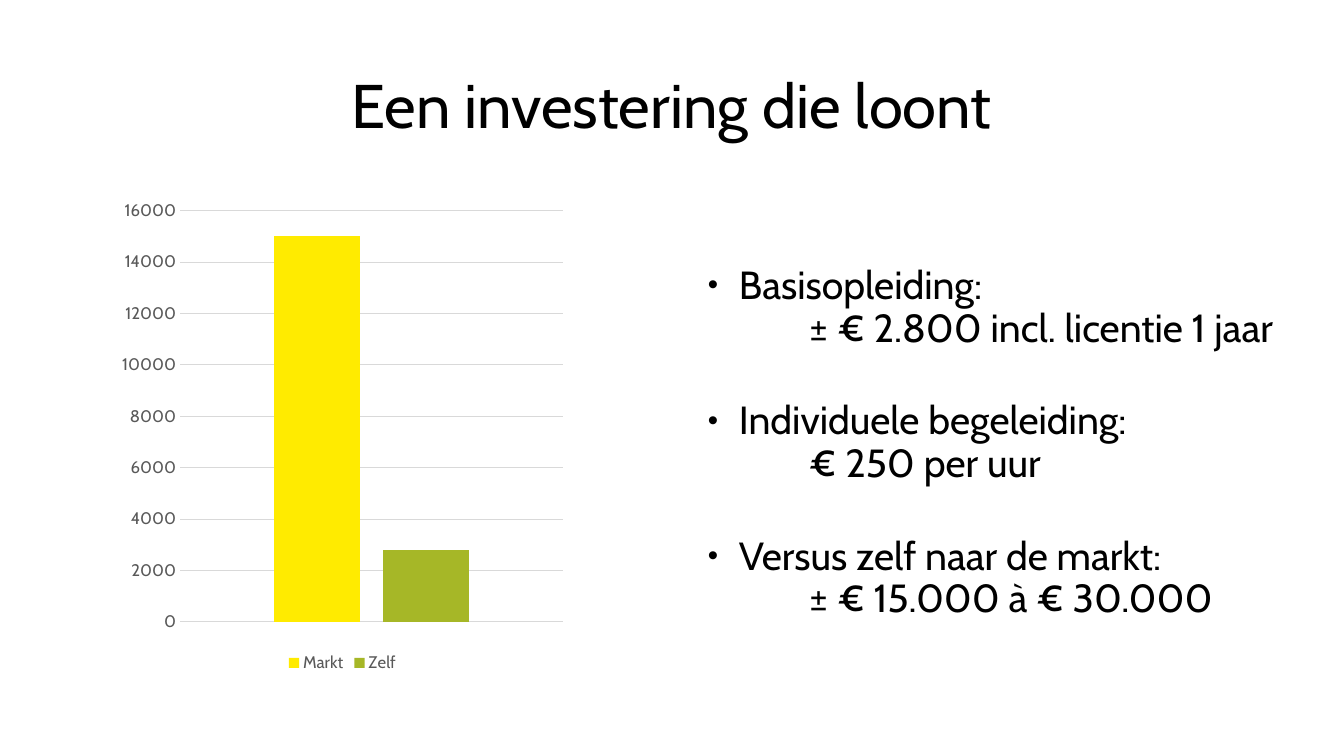
from lxml.etree import SubElement
from pptx import Presentation
from pptx.chart.data import CategoryChartData
from pptx.dml.color import RGBColor
from pptx.enum.chart import XL_CHART_TYPE, XL_LEGEND_POSITION, XL_TICK_MARK
from pptx.enum.text import MSO_ANCHOR, MSO_AUTO_SIZE, PP_ALIGN
from pptx.oxml.ns import qn
from pptx.util import Emu, Pt

PX = 914400 / 100.8
FONT = "Cabin"
COLORS = {"text": "000000", "labels": "595959", "grid": "D9D9D9",
          "Markt": "FFEB00", "Zelf": "A6B727"}
COSTS = {"Markt": 15000, "Zelf": 2800}
OFFERS = [
    "Basisopleiding:\v\t± € 2.800 incl. licentie 1 jaar",
    "Individuele begeleiding:\v\t€ 250 per uur",
    "Versus zelf naar de markt:\v\t± € 15.000 à € 30.000",
]


def px(length):
    """Turn pixels into EMU."""
    return Emu(round(length * PX))


def rgb(name):
    """Look up a named colour."""
    return RGBColor.from_string(COLORS[name])


def style_font(font, size, color):
    """Set family, size and colour of a font."""
    font.name, font.size = FONT, Pt(size)
    font.color.rgb = rgb(color)


def add_bullet(paragraph, indent, tab):
    """Give a paragraph a small hanging bullet and a tab distance."""
    properties = paragraph._p.get_or_add_pPr()
    properties.set("marL", str(px(indent)))
    properties.set("indent", str(-px(indent)))
    properties.set("defTabSz", str(px(tab)))
    bullet_color = SubElement(properties, qn("a:buClr"))
    SubElement(bullet_color, qn("a:srgbClr"), val=COLORS["text"])
    SubElement(properties, qn("a:buSzPct"), val="75000")
    SubElement(properties, qn("a:buFont"), typeface="Arial")
    SubElement(properties, qn("a:buChar"), char="•")


def write(paragraph, text, size=28, color="text", align=PP_ALIGN.LEFT,
          spacing=0.9, before=0, indent=0, tab=101):
    """Fill a paragraph with formatted text."""
    if indent:
        add_bullet(paragraph, indent, tab)
    paragraph.text = text
    paragraph.alignment = align
    paragraph.line_spacing = spacing
    paragraph.space_before = Pt(before)
    style_font(paragraph.font, size, color)
    for run in paragraph.runs:
        style_font(run.font, size, color)


def place(placeholder, box, anchor):
    """Move a placeholder to a box and return its cleared frame."""
    placeholder.left, placeholder.top, placeholder.width, placeholder.height = map(px, box)
    frame = placeholder.text_frame
    frame.margin_left = frame.margin_right = frame.margin_top = frame.margin_bottom = 0
    frame.word_wrap = True
    frame.auto_size = MSO_AUTO_SIZE.NONE
    frame.vertical_anchor = anchor
    return frame


def add_heading(slide, box):
    """Write the slide title."""
    frame = place(slide.shapes.title, box, MSO_ANCHOR.MIDDLE)
    write(frame.paragraphs[0], "Een investering die loont", size=44,
          align=PP_ALIGN.CENTER, spacing=Pt(38))


def add_offers(slide, box):
    """List the prices of each offer."""
    frame = place(slide.placeholders[1], box, MSO_ANCHOR.TOP)
    for index, offer in enumerate(OFFERS):
        paragraph = frame.add_paragraph() if index else frame.paragraphs[0]
        write(paragraph, offer, before=36 if index else 0, indent=31)


def add_cost_chart(slide, box):
    """Compare the costs in a column chart."""
    data = CategoryChartData()
    data.categories = ["1"]
    for name, cost in COSTS.items():
        data.add_series(name, [cost])
    chart = slide.shapes.add_chart(XL_CHART_TYPE.COLUMN_CLUSTERED,
                                   *map(px, box), data).chart
    style_font(chart.font, 12, "labels")
    chart.has_title = False
    chart.has_legend = True
    chart.legend.position = XL_LEGEND_POSITION.BOTTOM
    chart.legend.include_in_layout = False
    style_font(chart.legend.font, 12, "labels")

    columns = chart.plots[0]
    columns.gap_width, columns.overlap = 219, -27
    columns.vary_by_categories = False
    for series in columns.series:
        series.format.fill.solid()
        series.format.fill.fore_color.rgb = rgb(series.name)

    chart.category_axis.visible = False
    costs_axis = chart.value_axis
    costs_axis.minimum_scale, costs_axis.maximum_scale = 0, 16000
    costs_axis.major_unit = 2000
    costs_axis.major_tick_mark = costs_axis.minor_tick_mark = XL_TICK_MARK.NONE
    costs_axis.format.line.fill.background()
    style_font(costs_axis.tick_labels.font, 12, "labels")
    grid = costs_axis.major_gridlines.format.line
    grid.width = Pt(0.75)
    grid.color.rgb = rgb("grid")


def main():
    """Build and save the slide."""
    deck = Presentation()
    deck.slide_width, deck.slide_height = px(1344), px(756)
    slide = deck.slides.add_slide(deck.slide_layouts[1])
    add_heading(slide, (41, 47, 1262, 134))
    add_offers(slide, (708, 266, 596, 337))
    add_cost_chart(slide, (113, 191, 459, 486))
    deck.save("out.pptx")


if __name__ == "__main__":
    main()
